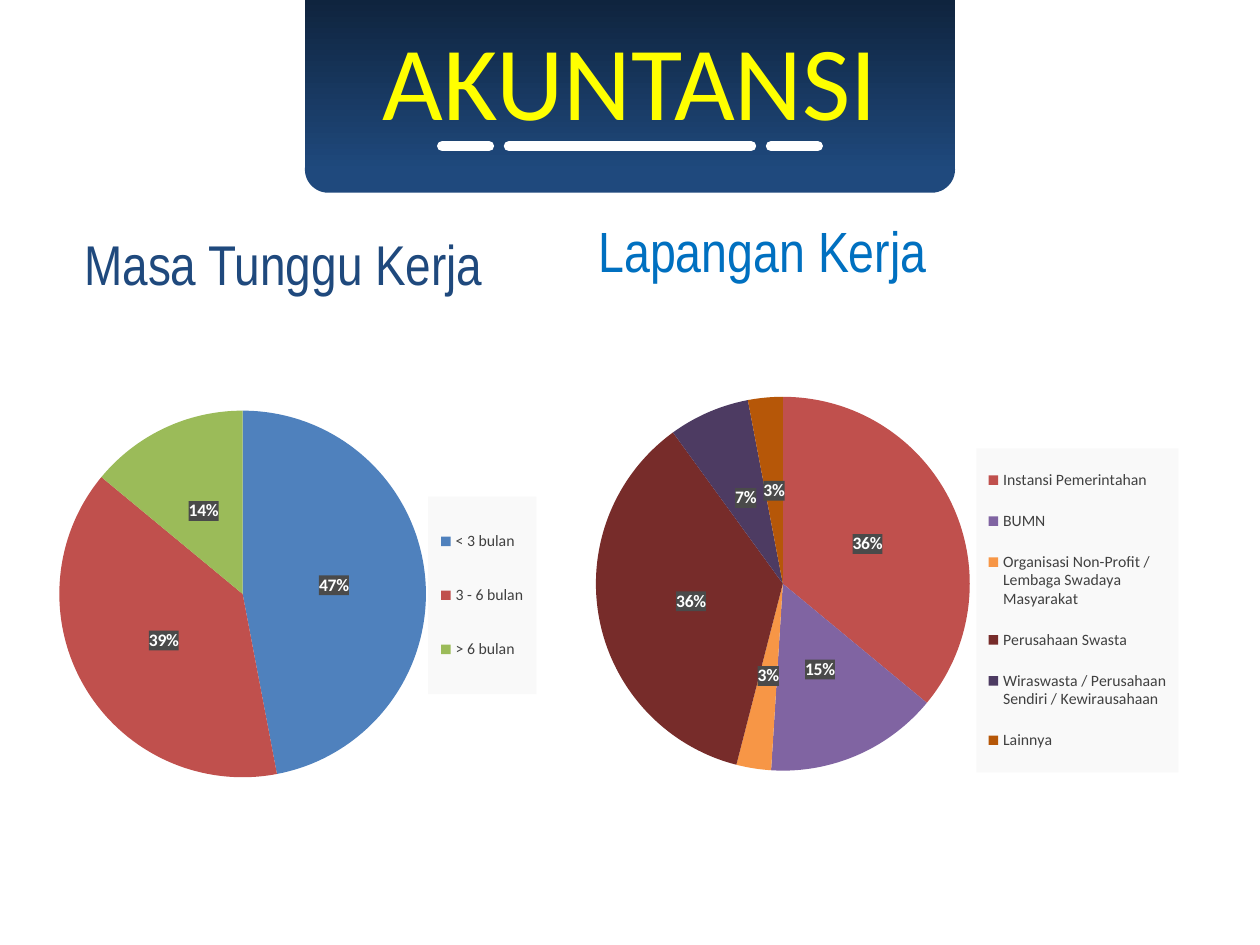
from lxml.etree import SubElement
from pptx import Presentation
from pptx.chart.data import CategoryChartData
from pptx.dml.color import RGBColor
from pptx.enum.chart import XL_CHART_TYPE as ChartType, XL_LABEL_POSITION as LabelPosition
from pptx.enum.chart import XL_LEGEND_POSITION as LegendPosition
from pptx.enum.shapes import MSO_CONNECTOR as Connector, MSO_SHAPE as Shape
from pptx.enum.text import MSO_ANCHOR as Anchor, MSO_AUTO_SIZE as AutoSize, PP_ALIGN as Align
from pptx.oxml import parse_xml
from pptx.oxml.ns import nsdecls, qn
from pptx.util import Inches, Pt

# Content
TITLE = "AKUNTANSI"
HEADINGS = [
    dict(text="Masa Tunggu Kerja", box=(0.57, 1.77, 3.38, 0.84), style="heading_left", spacing=1.0),
    dict(text="Lapangan Kerja", box=(4.65, 1.77, 3.61, 0.58), style="heading_right", spacing=0.8),
]
# Pie and legend boxes are slide positions in inches
CHARTS = [
    dict(
        box=(0.33, 2.6, 4, 4.23),
        pie=(0.47, 3.26, 2.91, 2.91),
        legend=(3.4, 3.94, 0.86, 1.57),
        slices=[("< 3 bulan", 47, "4F81BD"), ("3 - 6 bulan", 39, "C0504D"), ("> 6 bulan", 14, "9BBB59")],
    ),
    dict(
        box=(4.59, 2.75, 4.81, 3.76),
        pie=(4.73, 3.15, 2.97, 2.97),
        legend=(7.75, 3.56, 1.6, 2.57),
        slices=[
            ("Instansi Pemerintahan", 36, "C0504D"),
            ("BUMN", 15, "8064A2"),
            ("Organisasi Non-Profit / Lembaga Swadaya Masyarakat", 3, "F79646"),
            ("Perusahaan Swasta", 36, "772C2A"),
            ("Wiraswasta / Perusahaan Sendiri / Kewirausahaan", 7, "4D3B62"),
            ("Lainnya", 3, "B65708"),
        ],
    ),
]

# Theme: colours and type
THEME = dict(
    navy="1F497D", dark="0F243E", white="FFFFFF", label_fill="4A4A4A", legend_fill="F9F9F9",
    title=dict(name="Calibri", size=60, color="FFFF00", bold=False),
    heading_left=dict(name="Arial Narrow", size=32, color="1F497D"),
    heading_right=dict(name="Arial Narrow", size=32.4, color="0070C0"),
    chart=dict(name="Calibri", size=10, color="000000"),
    label=dict(name="Calibri", size=10, color="FFFFFF", bold=True),
    legend=dict(name="Calibri", size=9, color="404040"),
)
BANNER_LEFT, BANNER_WIDTH, BANNER_HEIGHT = 2.42, 5.16, 1.36
DASH_Y, DASH_WIDTHS, DASH_GAP = 1.16, (0.37, 1.92, 0.37), 0.16


def set_font(font, style):
    for key, value in THEME[style].items():
        if key == "color":
            font.color.rgb = RGBColor.from_string(value)
        else:
            setattr(font, key, Pt(value) if key == "size" else value)


def add_banner_part(slide, kind, top, height):
    shape = slide.shapes.add_shape(
        kind, *map(Inches, (BANNER_LEFT, top, BANNER_WIDTH, height)))
    shape.shadow.inherit = False
    shape.line.fill.background()
    shape.fill.solid()
    shape.fill.fore_color.rgb = RGBColor.from_string(THEME["navy"])
    return shape


def add_banner(slide):
    base = add_banner_part(slide, Shape.ROUNDED_RECTANGLE, 1.16, 0.37)
    base.adjustments[0] = 0.5
    fill = add_banner_part(slide, Shape.RECTANGLE, 0, BANNER_HEIGHT).fill
    fill.gradient()
    fill.gradient_angle = 270
    for stop, position, color in zip(fill.gradient_stops, (0, 1), ("dark", "navy")):
        stop.position = position
        stop.color.rgb = RGBColor.from_string(THEME[color])

    # Three rounded dashes centred under the title
    left = BANNER_LEFT + (BANNER_WIDTH - sum(DASH_WIDTHS) - 2 * DASH_GAP) / 2
    for width in DASH_WIDTHS:
        dash = slide.shapes.add_connector(
            Connector.STRAIGHT, *map(Inches, (left, DASH_Y, left + width, DASH_Y)))
        dash.line.width = Pt(6)
        dash.line.color.rgb = RGBColor.from_string(THEME["white"])
        dash.line._get_or_add_ln().set("cap", "rnd")
        SubElement(dash.element.spPr, qn("a:effectLst"))
        left += width + DASH_GAP


def add_title(slide):
    title = slide.shapes.title
    places = dict(left=2.76, top=0.33, width=4.48, height=0.84)
    for key, value in places.items():
        setattr(title, key, Inches(value))
    frame = title.text_frame
    frame.text = TITLE
    frame.auto_size = AutoSize.NONE
    frame.vertical_anchor = Anchor.BOTTOM
    paragraph = frame.paragraphs[0]
    paragraph.alignment = Align.CENTER
    set_font(paragraph.runs[0].font, "title")
    slide.shapes.element.append(title.element)  # in front of the banner


def add_heading(slide, text, box, style, spacing):
    frame = slide.shapes.add_textbox(*map(Inches, box)).text_frame
    frame.word_wrap = True
    frame.text = text
    paragraph = frame.paragraphs[0]
    paragraph.line_spacing = spacing
    set_font(paragraph.runs[0].font, style)


def layout_xml(part, box, inner):
    left, top, width, height = box
    values = dict(x=(part[0] - left) / width, y=(part[1] - top) / height,
                  w=part[2] / width, h=part[3] / height)
    target = '<c:layoutTarget val="inner"/>' if inner else ""
    modes = '<c:xMode val="edge"/><c:yMode val="edge"/>'
    sizes = "".join(f'<c:{key} val="{value:.3f}"/>' for key, value in values.items())
    return parse_xml(f'<c:layout {nsdecls("c")}><c:manualLayout>{target}{modes}{sizes}'
                     "</c:manualLayout></c:layout>")


def fill_xml(color):
    return parse_xml(f'<c:spPr {nsdecls("c", "a")}><a:solidFill>'
                     f'<a:srgbClr val="{THEME[color]}"/></a:solidFill></c:spPr>')


def add_pie(slide, box, pie, legend, slices):
    names, values, colors = zip(*slices)
    data = CategoryChartData()
    data.categories = names
    data.add_series("Series 1", values)
    chart = slide.shapes.add_chart(ChartType.PIE, *map(Inches, box), data).chart
    chart.has_title = False
    set_font(chart.font, "chart")

    # Slices and percentages
    plot = chart.plots[0]
    plot.vary_by_categories = True
    for index, color in enumerate(colors):
        fill = plot.series[0].points[index].format.fill
        fill.solid()
        fill.fore_color.rgb = RGBColor.from_string(color)
    labels = plot.series[0].data_labels
    formats = dict(show_percentage=True, show_value=False, show_legend_key=False,
                   number_format="0%", number_format_is_linked=False,
                   position=LabelPosition.CENTER)
    for key, value in formats.items():
        setattr(labels, key, value)
    set_font(labels.font, "label")
    labels._element.find(qn("c:txPr")).addprevious(fill_xml("label_fill"))

    # Legend
    chart.has_legend = True
    chart.legend.position = LegendPosition.RIGHT
    chart.legend.include_in_layout = False
    set_font(chart.legend.font, "legend")
    legend_element = chart.legend._element
    legend_element.find(qn("c:txPr")).addprevious(fill_xml("legend_fill"))

    # Fixed places for pie and legend
    plot_area = chart._chartSpace.chart.plotArea
    for parent in (plot_area, legend_element):
        for layout in parent.findall(qn("c:layout")):
            parent.remove(layout)
    plot_area.insert(0, layout_xml(pie, box, True))
    legend_element.find(qn("c:legendPos")).addnext(layout_xml(legend, box, False))


def main():
    presentation = Presentation()
    presentation.slide_width, presentation.slide_height = Inches(10), Inches(7.5)
    slide = presentation.slides.add_slide(presentation.slide_layouts[5])
    add_banner(slide)
    add_title(slide)
    for heading, chart in zip(HEADINGS, CHARTS):
        add_heading(slide, **heading)
        add_pie(slide, **chart)
    presentation.save("out.pptx")


if __name__ == "__main__":
    main()
